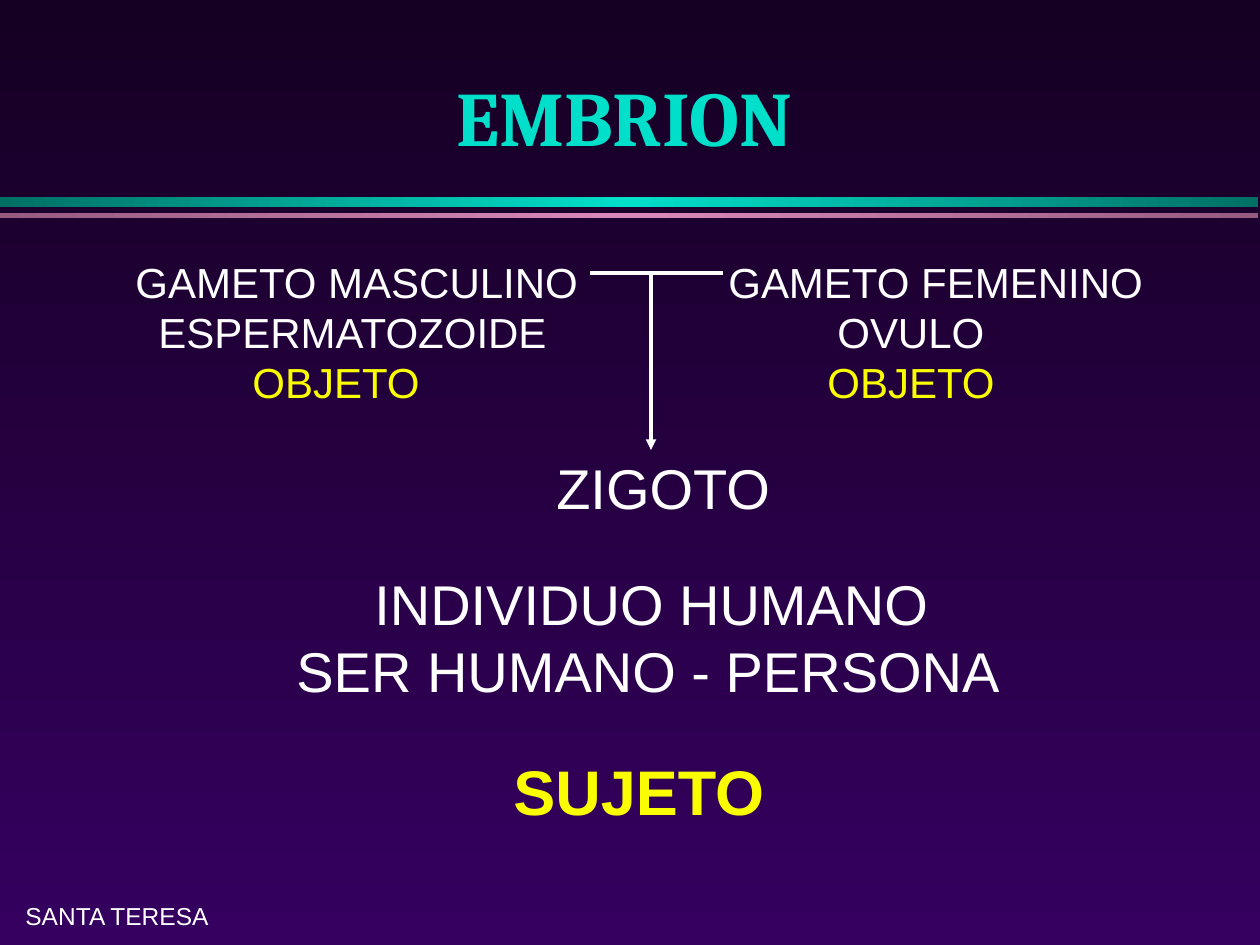
from copy import deepcopy

from pptx import Presentation
from pptx.dml.color import RGBColor
from pptx.enum.shapes import MSO_CONNECTOR, MSO_SHAPE
from pptx.enum.text import MSO_ANCHOR, PP_ALIGN
from pptx.oxml.ns import qn
from pptx.util import Pt
from lxml.etree import SubElement

EMU_PER_PX = 914400 / 126
COLORS = {
    "night": "150022", "violet": "350060",
    "teal": "00DFCA", "deep_teal": "007065",
    "pink": "D989B8", "deep_pink": "965A7F",
    "white": "FFFFFF", "yellow": "FAFD00",
}


def px(length):
    return round(length * EMU_PER_PX)


def rgb(name):
    return RGBColor.from_string(COLORS[name])


def paint_gradient(fill, owner, names, angle):
    """Spread the named colours evenly; owner is the XML element holding the fill."""
    fill.gradient()
    fill.gradient_angle = angle
    stop_list = next(owner.iter(qn("a:gsLst")))
    while len(stop_list) < len(names):
        stop_list.append(deepcopy(stop_list[-1]))
    for index, (stop, name) in enumerate(zip(fill.gradient_stops, names)):
        stop.position = index / (len(names) - 1)
        stop.color.rgb = rgb(name)


def add_bar(slide, top, height, edge, middle):
    bar = slide.shapes.add_shape(MSO_SHAPE.RECTANGLE, 0, px(top), px(1258), px(height))
    bar.shadow.inherit = False
    bar.line.fill.background()
    paint_gradient(bar.fill, bar._element, [edge, middle, edge], 0)


def add_text(slide, box, lines, size, font="Arial", color="white", bold=False,
             align=PP_ALIGN.LEFT, anchor=MSO_ANCHOR.TOP, wrap=False):
    """Each line is (text, indent in px) with an optional colour of its own."""
    frame = slide.shapes.add_textbox(*map(px, box)).text_frame
    frame.word_wrap = wrap
    frame.vertical_anchor = anchor
    for index, (text, indent, *own_color) in enumerate(lines):
        paragraph = frame.paragraphs[0] if index == 0 else frame.add_paragraph()
        paragraph.alignment = align
        if indent:
            paragraph._p.get_or_add_pPr().set("marL", str(px(indent)))
        run = paragraph.add_run()
        run.text = text
        style = {"size": Pt(size), "name": font, "bold": bold}
        for attribute, value in style.items():
            setattr(run.font, attribute, value)
        run.font.color.rgb = rgb(own_color[0] if own_color else color)


def add_line(slide, start, end, arrow=False):
    line = slide.shapes.add_connector(MSO_CONNECTOR.STRAIGHT, *map(px, start + end))
    line.line.color.rgb = rgb("white")
    line.line.width = Pt(2)
    if arrow:
        SubElement(line.line._get_or_add_ln(), qn("a:tailEnd"), type="triangle")
    SubElement(line._element.spPr, qn("a:effectLst"))


def main():
    presentation = Presentation()
    presentation.slide_width, presentation.slide_height = px(1260), px(945)
    slide = presentation.slides.add_slide(presentation.slide_layouts[6])
    background = slide.background
    paint_gradient(background.fill, slide._element, ["night", "violet"], 270)

    add_bar(slide, 197, 10, "deep_teal", "teal")
    add_bar(slide, 213, 5, "deep_pink", "pink")
    add_text(slide, (13, 895, 218, 42), [("SANTA TERESA", 0)], 14,
             anchor=MSO_ANCHOR.MIDDLE)
    add_text(slide, (84, 10, 1081, 158), [("EMBRION", 0)], 44, font="Cambria",
             color="teal", bold=True, align=PP_ALIGN.CENTER,
             anchor=MSO_ANCHOR.BOTTOM, wrap=True)

    male = [("GAMETO MASCULINO", 0), ("ESPERMATOZOIDE", 23), ("OBJETO", 117, "yellow")]
    female = [("GAMETO FEMENINO", 0), ("OVULO", 109), ("OBJETO", 99, "yellow")]
    for left, width, gamete in ((123, 470, male), (716, 441, female)):
        add_text(slide, (left, 250, width, 164), gamete, 24, wrap=True)

    add_text(slide, (544, 447, 239, 79), [("ZIGOTO", 0)], 32)
    add_text(slide, (284, 563, 842, 146),
             [("INDIVIDUO HUMANO", 78), ("SER HUMANO - PERSONA", 0)], 32, wrap=True)
    add_text(slide, (501, 746, 277, 88), [("SUJETO", 0)], 36, color="yellow", bold=True)

    add_line(slide, (590, 273), (723, 273))
    add_line(slide, (651, 274), (651, 450), arrow=True)

    presentation.save("out.pptx")


if __name__ == "__main__":
    main()
